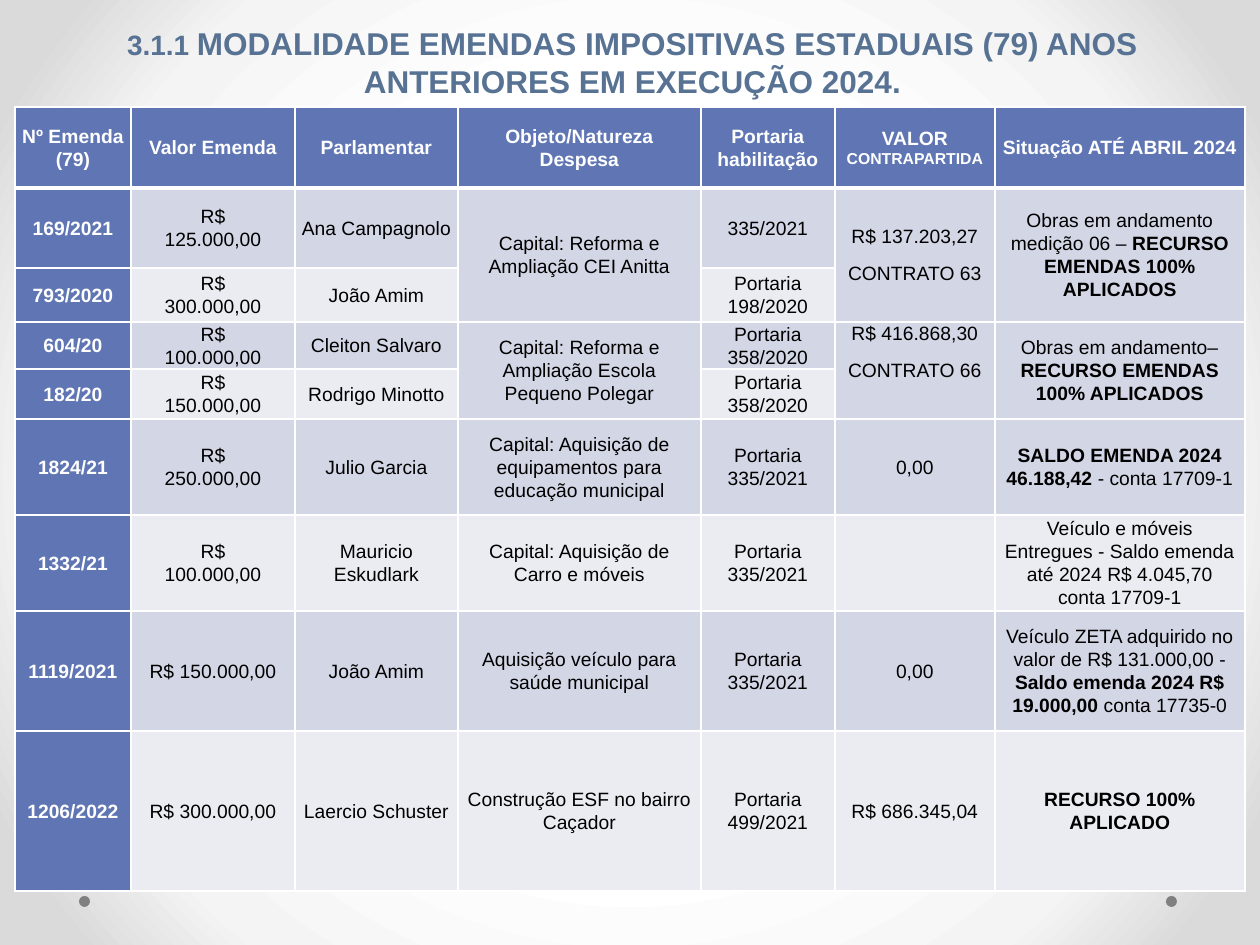
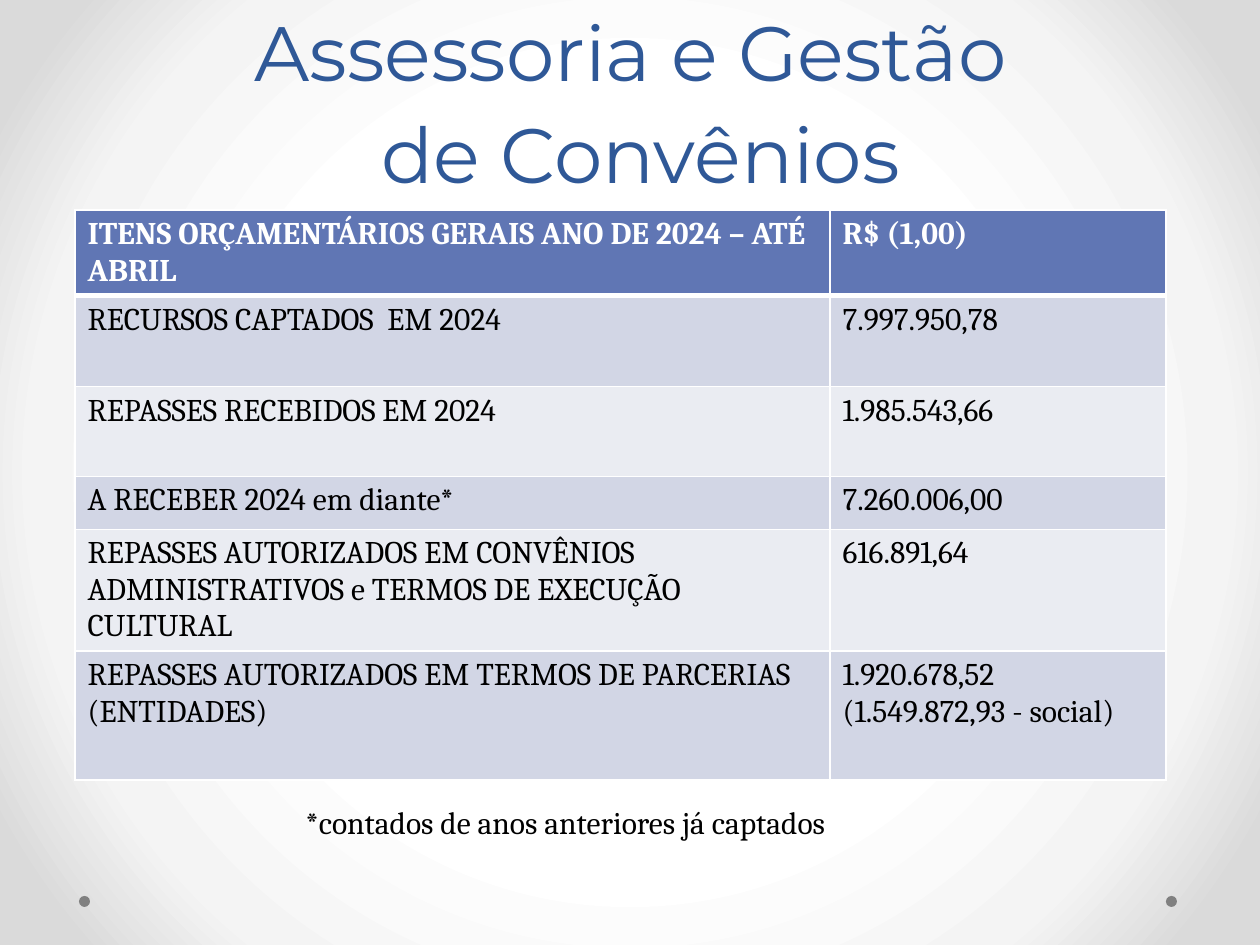
import pptx
import pptx.dml.color
import pptx.enum.shapes
import pptx.enum.text
import pptx.oxml
import pptx.oxml.ns
import pptx.util

EMU_PER_PX = 914400 // 126
WHITE, BLACK, GREY = "FFFFFF", "000000", "808080"
HEADER_BLUE, BAND_DARK, BAND_LIGHT = "6076B4", "D2D6E5", "EAECF2"
TITLE_SLATE, TITLE_BLUE = "577293", "2F5897"
CENTER = pptx.enum.text.PP_ALIGN.CENTER
TOP = pptx.enum.text.MSO_ANCHOR.TOP
MIDDLE = pptx.enum.text.MSO_ANCHOR.MIDDLE
BOTTOM = pptx.enum.text.MSO_ANCHOR.BOTTOM
NAMESPACE = pptx.oxml.ns.nsdecls("a")


def px(length):
    return pptx.util.Emu(length * EMU_PER_PX)


def color(value):
    return pptx.dml.color.RGBColor.from_string(value)


class Deck:
    """Holds the shared style and the slide being built."""

    def __init__(self):
        self.presentation = pptx.Presentation()
        self.presentation.slide_width = pptx.util.Inches(10)
        self.presentation.slide_height = pptx.util.Inches(7.5)
        self.slide = None
        self.set_background([(0, WHITE), (50, WHITE), (76, "F4F4F4"), (92, "DADADA")])

    def set_background(self, stops):
        master = self.presentation.slide_master
        master.background.fill.gradient()
        old = master.element.xpath(".//p:bgPr/a:gradFill")[0]
        stop_xml = "".join(
            f'<a:gs pos="{position * 1000}"><a:srgbClr val="{value}"/></a:gs>'
            for position, value in stops)
        new = pptx.oxml.parse_xml(
            f'<a:gradFill {NAMESPACE} rotWithShape="1"><a:gsLst>{stop_xml}</a:gsLst>'
            '<a:path path="circle"><a:fillToRect l="50000" t="50000" r="50000" b="50000"/>'
            '</a:path></a:gradFill>')
        old.getparent().replace(old, new)

    def add_slide(self):
        self.slide = self.presentation.slides.add_slide(self.presentation.slide_layouts[5])
        for left in (1166, 79):
            self.add_dot(left, 896, 11)

    def add_dot(self, left, top, size):
        dot = self.slide.shapes.add_shape(
            pptx.enum.shapes.MSO_SHAPE.OVAL, px(left), px(top), px(size), px(size))
        dot.shadow.inherit = False
        dot.fill.solid()
        dot.fill.fore_color.rgb = color(GREY)
        dot.line.fill.background()

    def add_text(self, paragraph, text, font, size, value, bold=False):
        """Adds one run per line, with a line break at each line feed."""
        for number, line in enumerate(text.split("\n")):
            if number:
                paragraph.add_line_break()
            run = paragraph.add_run()
            run.text = line
            run.font.name = font
            run.font.size = pptx.util.Pt(size)
            run.font.bold = bold
            run.font.color.rgb = color(value)

    def add_title(self, box, runs, font, value, spacing, bold=False):
        title = self.slide.shapes.title
        title.left, title.top, title.width, title.height = map(px, box)
        frame = title.text_frame
        frame.word_wrap = True
        frame.auto_size = pptx.enum.text.MSO_AUTO_SIZE.NONE
        frame.vertical_anchor = BOTTOM
        paragraph = frame.paragraphs[0]
        paragraph.alignment = CENTER
        paragraph.line_spacing = spacing
        for text, size in runs:
            self.add_text(paragraph, text, font, size, value, bold)

    def add_note(self, box, text, font, size):
        note = self.slide.shapes.add_textbox(*map(px, box))
        note.text_frame.word_wrap = True
        self.add_text(note.text_frame.paragraphs[0], text, font, size, BLACK)

    def add_borders(self, cell, top, bottom):
        properties = cell._tc.get_or_add_tcPr()
        for index, (side, width) in enumerate(
                [("L", 1), ("R", 1), ("T", top), ("B", bottom)]):
            properties.insert(index, pptx.oxml.parse_xml(
                f'<a:ln{side} {NAMESPACE} w="{width * 12700}"><a:solidFill>'
                f'<a:srgbClr val="{WHITE}"/></a:solidFill></a:ln{side}>'))

    def fill_cell(self, cell, text, font, size, value, bold, small, compact):
        """A double bar starts a paragraph; single bars enclose the emphasised part."""
        if compact:
            cell.margin_left = cell.margin_right = px(6)
            cell.margin_top = cell.margin_bottom = 0
            cell.vertical_anchor = MIDDLE
        lines = text.split("||") if text else []
        for number, line in enumerate(lines):
            frame = cell.text_frame
            paragraph = frame.add_paragraph() if number else frame.paragraphs[0]
            if compact:
                paragraph.alignment = CENTER
                paragraph.line_spacing = 1.07
            if len(lines) > 1:
                paragraph.space_after = pptx.util.Pt(8)
            for part, words in enumerate(line.split("|")):
                emphasised = part % 2 == 1
                if words:
                    self.add_text(paragraph, words, font,
                                  small if emphasised and small else size,
                                  value, bold or emphasised)

    def add_table(self, left, top, columns, heights, rows, font, size,
                  header_column=False, compact=False):
        """A cell given as None continues the cell above it."""
        frame = self.slide.shapes.add_table(
            len(rows), len(columns), px(left), px(top), px(sum(columns)), px(sum(heights)))
        table = frame.table
        for column, width in zip(table.columns, columns):
            column.width = px(width)
        for row, height in zip(table.rows, heights):
            row.height = px(height)
        for r, texts in enumerate(rows):
            for c, text in enumerate(texts):
                cell = table.cell(r, c)
                header = r == 0 or (header_column and c == 0)
                band = BAND_DARK if r % 2 else BAND_LIGHT
                cell.fill.solid()
                cell.fill.fore_color.rgb = color(HEADER_BLUE if header else band)
                self.add_borders(cell, 3 if r == 1 else 1, 3 if r == 0 else 1)
                if text is None:
                    table.cell(r - 1, c).merge(cell)
                    continue
                self.fill_cell(cell, text, font, size, WHITE if header else BLACK,
                               header, 9 if r == 0 else None, compact)
        return table


AMENDMENTS = [
    ["Nº Emenda (79)", "Valor Emenda", "Parlamentar", "Objeto/Natureza Despesa",
     "Portaria habilitação", "VALOR |CONTRAPARTIDA|", "Situação ATÉ ABRIL 2024"],
    ["169/2021", "R$\n125.000,00", "Ana Campagnolo",
     "Capital: Reforma e Ampliação CEI Anitta", "335/2021",
     "R$ 137.203,27||CONTRATO 63",
     "Obras em andamento medição 06 – |RECURSO EMENDAS 100% APLICADOS|"],
    ["793/2020", "R$\n300.000,00", "João Amim", None, "Portaria 198/2020", None, None],
    ["604/20", "R$\n100.000,00", "Cleiton Salvaro",
     "Capital: Reforma e Ampliação Escola Pequeno Polegar", "Portaria 358/2020",
     "R$ 416.868,30||CONTRATO 66",
     "Obras em andamento– |RECURSO EMENDAS 100% APLICADOS|"],
    ["182/20", "R$\n150.000,00", "Rodrigo Minotto", None, "Portaria 358/2020", None, None],
    ["1824/21", "R$\n250.000,00", "Julio Garcia",
     "Capital: Aquisição de equipamentos para educação municipal", "Portaria 335/2021",
     "0,00", "|SALDO EMENDA 2024 46.188,42 |- conta 17709-1"],
    ["1332/21", "R$\n100.000,00", "Mauricio Eskudlark",
     "Capital: Aquisição de Carro e móveis", "Portaria 335/2021", "",
     "Veículo e móveis Entregues - Saldo emenda até 2024 R$ 4.045,70 conta 17709-1"],
    ["1119/2021", "R$ 150.000,00", "João Amim", "Aquisição veículo para saúde municipal",
     "Portaria 335/2021", "0,00",
     "Veículo ZETA adquirido no valor de R$ 131.000,00 - "
     "|Saldo emenda 2024 R$ 19.000,00| conta 17735-0"],
    ["1206/2022", "R$ 300.000,00", "Laercio Schuster", "Construção ESF no bairro Caçador",
     "Portaria 499/2021", "R$ 686.345,04", "|RECURSO 100% APLICADO|"],
]

BUDGET = [
    ["ITENS ORÇAMENTÁRIOS GERAIS ANO DE 2024 – ATÉ ABRIL", "R$ (1,00)"],
    ["RECURSOS CAPTADOS  EM 2024", "7.997.950,78"],
    ["REPASSES RECEBIDOS EM 2024", "1.985.543,66"],
    ["A RECEBER 2024 em diante*", "7.260.006,00"],
    ["REPASSES AUTORIZADOS EM CONVÊNIOS ADMINISTRATIVOS e TERMOS DE EXECUÇÃO CULTURAL",
     "616.891,64"],
    ["REPASSES AUTORIZADOS EM TERMOS DE PARCERIAS (ENTIDADES)",
     "1.920.678,52 (1.549.872,93 - social)"],
]


def main():
    deck = Deck()

    # State amendments
    deck.add_slide()
    deck.add_title(
        (75, 24, 1115, 82),
        [("3.1.1 ", 16),
         ("MODALIDADE EMENDAS IMPOSITIVAS ESTADUAIS (79) ANOS ANTERIORES EM EXECUÇÃO 2024.", 18)],
        "Arial", TITLE_SLATE, 1.0, bold=True)
    amendments = deck.add_table(
        15, 107, [116, 164, 163, 243, 134, 160, 250],
        [81, 80, 54, 47, 50, 96, 96, 120, 160],
        AMENDMENTS, "Arial", 11, header_column=True, compact=True)
    amendments.cell(3, 5).vertical_anchor = TOP

    # Budget overview
    deck.add_slide()
    deck.add_title((-84, 26, 1450, 179), [("Assessoria e Gestão \nde Convênios", 44)],
                   "Montserrat", TITLE_BLUE, pptx.util.Pt(58))
    deck.add_table(75, 210, [755, 336], [85, 91, 90, 53, 121, 129],
                   BUDGET, "Cambria", 18)
    deck.add_note((293, 797, 595, 50), "*contados de anos anteriores já captados",
                  "Cambria", 18)

    deck.presentation.save("out.pptx")


if __name__ == "__main__":
    main()
